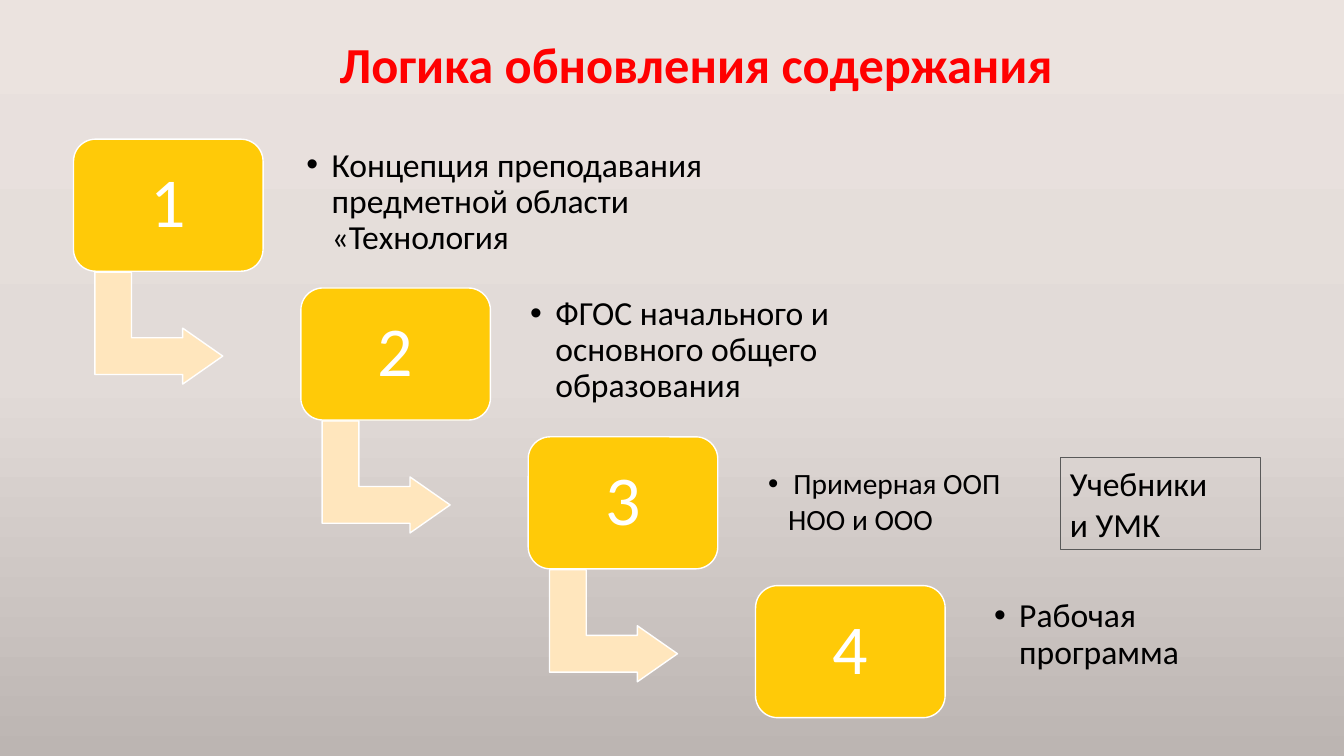
from copy import deepcopy
from dataclasses import dataclass

from lxml.etree import SubElement
from pptx import Presentation
from pptx.dml.color import RGBColor
from pptx.enum.shapes import MSO_SHAPE
from pptx.enum.text import MSO_ANCHOR, MSO_AUTO_SIZE, PP_ALIGN
from pptx.oxml.ns import qn
from pptx.shapes.autoshape import Shape
from pptx.slide import Slide
from pptx.text.text import TextFrame, _Paragraph
from pptx.util import Pt

RED = RGBColor(0xFF, 0x00, 0x00)
BLACK = RGBColor(0x00, 0x00, 0x00)
WHITE = RGBColor(0xFF, 0xFF, 0xFF)
GRAY = RGBColor(0x59, 0x59, 0x59)
GOLD = RGBColor(0xFF, 0xCA, 0x08)
CREAM = RGBColor(0xFF, 0xE6, 0xBD)
BACKGROUND_TOP = RGBColor(0xEB, 0xE3, 0xDF)
BACKGROUND_MIDDLE = RGBColor(0xE2, 0xDB, 0xD8)
BACKGROUND_BOTTOM = RGBColor(0xBC, 0xB5, 0xB2)

FONT = "Calibri"
COMPARISON_LAYOUT = 4
FIRST_LEFT, FIRST_TOP = 52.5, 99.4
STEP_RIGHT, STEP_DOWN = 162.4, 106.3
BOX_WIDTH, BOX_HEIGHT = 135.4, 94.3
ARROW_RIGHT, ARROW_DOWN = 20.9, 89.3
ARROW_WIDTH, ARROW_HEIGHT = 80, 91.4
LIST_HEIGHT = 76.3
BULLET_INDENT = 18
CONTINUATION_INDENT = 14.3


@dataclass(frozen=True)
class Step:
    text: str
    left: float
    top: float
    width: float
    inset: float = 7.2
    size: float = 24


STEPS = [
    Step("Концепция преподавания предметной области «Технология", 211.7, 106.6, 308.2),
    Step("ФГОС начального и основного общего образования", 371.5, 212.4, 272.2),
    Step("Примерная ООП\nНОО и ООО", 540.7, 321.1, 186.5, 8, 21),
    Step("Рабочая программа", 700.6, 415.4, 170.6, 9.4),
]


def place(shape: Shape, left: float, top: float, width: float, height: float) -> None:
    shape.left, shape.top = Pt(left), Pt(top)
    shape.width, shape.height = Pt(width), Pt(height)


def format_text(text_frame: TextFrame, size: float, color: RGBColor,
                bold: bool = False, align: PP_ALIGN = PP_ALIGN.LEFT,
                line_spacing: float = 0.9) -> None:
    text_frame.word_wrap = True
    text_frame.auto_size = MSO_AUTO_SIZE.NONE
    text_frame.vertical_anchor = MSO_ANCHOR.MIDDLE
    for paragraph in text_frame.paragraphs:
        paragraph.alignment = align
        paragraph.line_spacing = line_spacing
        paragraph.space_before = Pt(0)
        for run in paragraph.runs:
            run.font.name = FONT
            run.font.size = Pt(size)
            run.font.bold = bold
            run.font.color.rgb = color


def set_bullet(paragraph: _Paragraph, has_bullet: bool) -> None:
    properties = paragraph._p.get_or_add_pPr()
    margin = BULLET_INDENT if has_bullet else CONTINUATION_INDENT
    properties.set("marL", str(Pt(margin)))
    properties.set("indent", str(Pt(-BULLET_INDENT if has_bullet else 0)))
    if has_bullet:
        SubElement(properties, qn("a:buFont")).set("typeface", "Arial")
        SubElement(properties, qn("a:buChar")).set("char", "•")
    else:
        SubElement(properties, qn("a:buNone"))


def paint_background(slide: Slide) -> None:
    fill = slide.background.fill
    fill.gradient()
    fill.gradient_angle = 270
    stop_list = slide.element.xpath(".//a:gsLst")[0]
    stop_list.insert(1, deepcopy(stop_list[0]))
    colors = (BACKGROUND_TOP, BACKGROUND_MIDDLE, BACKGROUND_BOTTOM)
    for stop, position, color in zip(fill.gradient_stops, (0, 0.5, 1), colors):
        stop.position = position
        stop.color.rgb = color


def add_filled_shape(slide: Slide, kind: MSO_SHAPE, left: float, top: float,
                     width: float, height: float, color: RGBColor,
                     adjustments: tuple[float, ...]) -> Shape:
    shape = slide.shapes.add_shape(kind, Pt(left), Pt(top), Pt(width), Pt(height))
    shape.shadow.inherit = False
    shape.fill.solid()
    shape.fill.fore_color.rgb = color
    shape.line.color.rgb = WHITE
    shape.line.width = Pt(1)
    for index, value in enumerate(adjustments):
        shape.adjustments[index] = value
    return shape


def add_step(slide: Slide, index: int, step: Step, body: Shape) -> None:
    left = FIRST_LEFT + index * STEP_RIGHT
    top = FIRST_TOP + index * STEP_DOWN
    if index < len(STEPS) - 1:
        arrow = add_filled_shape(slide, MSO_SHAPE.BENT_UP_ARROW, left + ARROW_RIGHT,
                                 top + ARROW_DOWN, ARROW_WIDTH, ARROW_HEIGHT,
                                 CREAM, (0.328, 0.25, 0.358))
        arrow.rotation = 90
    box = add_filled_shape(slide, MSO_SHAPE.ROUNDED_RECTANGLE, left, top,
                           BOX_WIDTH, BOX_HEIGHT, GOLD, (0.167,))
    box.text_frame.text = str(index + 1)
    format_text(box.text_frame, 50, WHITE, align=PP_ALIGN.CENTER)

    place(body, step.left, step.top, step.width, LIST_HEIGHT)
    text_frame = body.text_frame
    text_frame.text = step.text
    format_text(text_frame, step.size, BLACK)
    text_frame.margin_left = text_frame.margin_right = Pt(step.inset)
    text_frame.margin_top = text_frame.margin_bottom = Pt(step.inset)
    for number, paragraph in enumerate(text_frame.paragraphs):
        paragraph.space_after = Pt(3)
        set_bullet(paragraph, number == 0)


def add_textbooks(slide: Slide) -> None:
    textbooks = slide.shapes.add_textbox(Pt(757.2), Pt(327), Pt(143.5), Pt(65.5))
    textbooks.line.color.rgb = GRAY
    textbooks.line.width = Pt(0.75)
    textbooks.text_frame.text = "Учебники\nи УМК"
    format_text(textbooks.text_frame, 24, BLACK, line_spacing=1.0)


def main() -> None:
    presentation = Presentation()
    presentation.slide_width, presentation.slide_height = Pt(960), Pt(540)
    slide = presentation.slides.add_slide(presentation.slide_layouts[COMPARISON_LAYOUT])
    paint_background(slide)

    title, *bodies = list(slide.placeholders)
    place(title, 235.4, 10.8, 608.4, 74.9)
    title.text_frame.text = "Логика обновления содержания"
    format_text(title.text_frame, 36, RED, bold=True)

    for index, (step, body) in enumerate(zip(STEPS, bodies)):
        add_step(slide, index, step, body)
    add_textbooks(slide)
    presentation.save("out.pptx")


if __name__ == "__main__":
    main()
